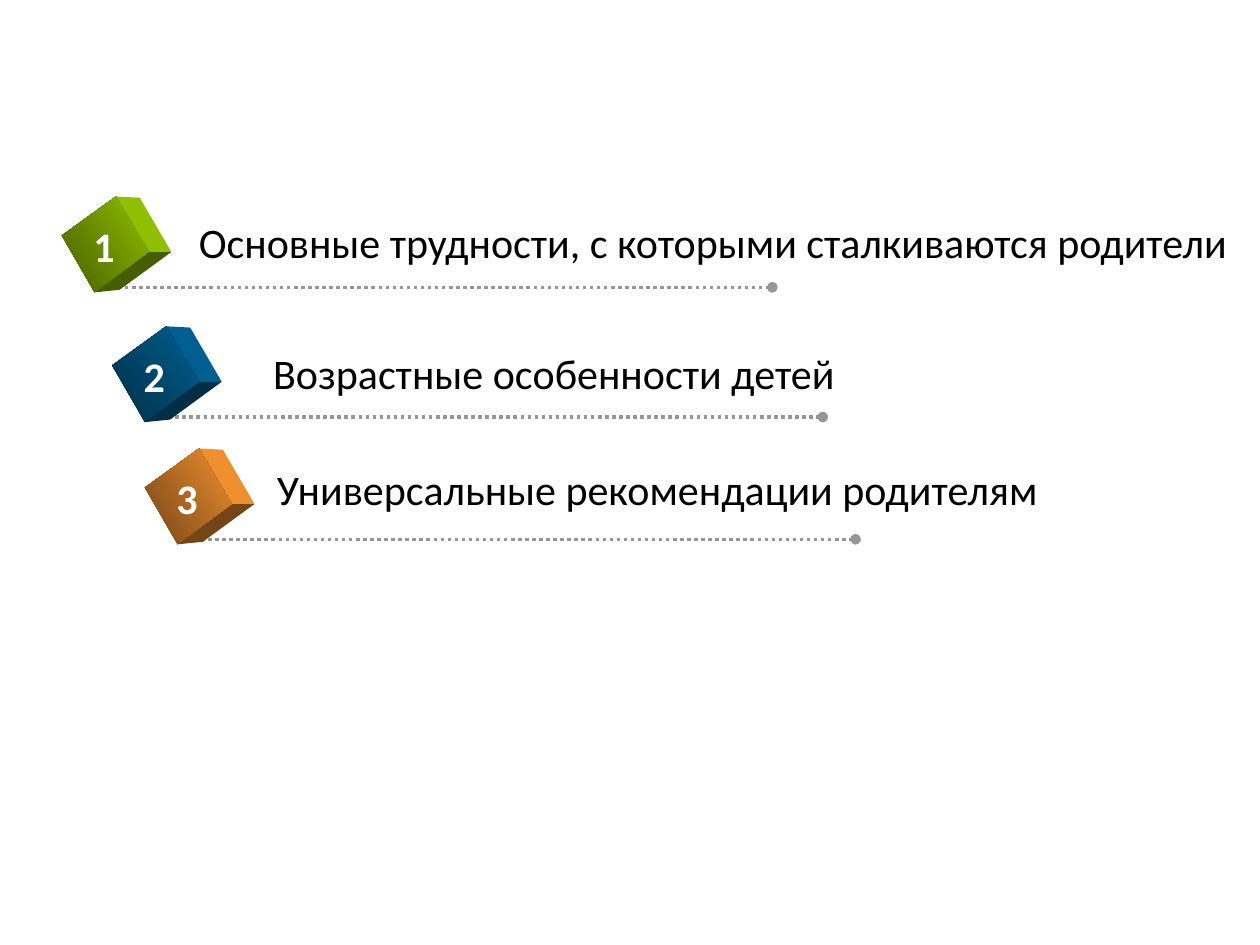
from lxml import etree
from pptx import Presentation
from pptx.dml.color import RGBColor
from pptx.enum.dml import MSO_LINE
from pptx.enum.shapes import MSO_CONNECTOR
from pptx.enum.text import MSO_AUTO_SIZE, PP_ALIGN
from pptx.oxml.ns import qn
from pptx.util import Inches, Pt

STRAIGHT, DOTS = MSO_CONNECTOR.STRAIGHT, MSO_LINE.ROUND_DOT
LEFT, CENTER = PP_ALIGN.LEFT, PP_ALIGN.CENTER
BLACK = RGBColor(0x00, 0x00, 0x00)
WHITE = RGBColor(0xFF, 0xFF, 0xFF)
GREY = RGBColor(0x96, 0x96, 0x96)
GREEN = RGBColor(0x8F, 0xBF, 0x00)
DARK_GREEN = RGBColor(0x46, 0x5D, 0x00)
BLUE = RGBColor(0x00, 0x5F, 0x90)
DARK_BLUE = RGBColor(0x00, 0x2E, 0x46)
ORANGE = RGBColor(0xEE, 0x8F, 0x30)
DARK_ORANGE = RGBColor(0x74, 0x45, 0x17)

# Text, start of the dotted line, text box (left, top, width), light and dark colour
ITEMS = [
    ("Основные трудности, с которыми сталкиваются родители",
     (0.88, 2.28), (1.48, 1.67, 8.44), GREEN, DARK_GREEN),
    ("Возрастные особенности детей",
     (1.28, 3.31), (2.07, 2.71, 4.7), BLUE, DARK_BLUE),
    ("Универсальные рекомендации родителям",
     (1.54, 4.28), (2.1, 3.63, 6.3), ORANGE, DARK_ORANGE),
]
LINE_LENGTH = 5.25

# Cube corners, measured from the start of the line
FRONT = [(-0.39, -0.41), (0.04, -0.72), (0.3, -0.28), (-0.13, 0.04)]
BACK_TOP, BACK_RIGHT, BACK_BOTTOM = (0.23, -0.71), (0.48, -0.28), (0.07, 0.02)
SIDE = [FRONT[1], BACK_TOP, BACK_RIGHT, FRONT[2]]
BASE = [FRONT[3], FRONT[2], BACK_RIGHT, BACK_BOTTOM]

prs = Presentation()
prs.slide_width, prs.slide_height = Inches(10), Inches(7.5)
s = prs.slides.add_slide(prs.slide_layouts[6])


def add_line(x, y):
    line = s.shapes.add_connector(STRAIGHT, Inches(x), Inches(y),
                                  Inches(x + LINE_LENGTH), Inches(y))
    line.line.color.rgb = GREY
    line.line.width = Pt(2)
    line.line.dash_style = DOTS
    etree.SubElement(line.line._get_or_add_ln(), qn("a:tailEnd"), type="oval")
    etree.SubElement(line._element.spPr, qn("a:effectLst"))


def add_face(x, y, corners, start, end):
    points = [(Inches(x + dx), Inches(y + dy)) for dx, dy in corners]
    builder = s.shapes.build_freeform(*points[0])
    builder.add_line_segments(points[1:], close=True)
    sp = builder.convert_to_shape()
    sp.shadow.inherit = False
    sp.line.fill.background()
    if start == end:
        sp.fill.solid()
        sp.fill.fore_color.rgb = start
    else:
        sp.fill.gradient()
        sp.fill.gradient_angle = 35
        for stop, color, position in zip(sp.fill.gradient_stops, (start, end), (0, 1)):
            stop.color.rgb = color
            stop.position = position


def add_text(text, left, top, width, height, color, bold, align):
    tf = s.shapes.add_textbox(Inches(left), Inches(top),
                              Inches(width), Inches(height)).text_frame
    tf.word_wrap = False
    tf.auto_size = MSO_AUTO_SIZE.SHAPE_TO_FIT_TEXT
    p = tf.paragraphs[0]
    p.alignment = align
    r = p.add_run()
    r.text = text
    r.font.name, r.font.size, r.font.bold = "Calibri", Pt(24), bold
    r.font.color.rgb = color


for number, (text, (x, y), (left, top, width), light, dark) in enumerate(ITEMS, 1):
    add_line(x, y)
    # Numbered cube
    add_face(x, y, BASE, dark, dark)
    add_face(x, y, SIDE, light, light)
    add_face(x, y, FRONT, dark, light)
    add_text(text, left, top, width, 0.51, BLACK, False, LEFT)
    add_text(str(number), x - 0.25, y - 0.58, 0.39, 0.5, WHITE, True, CENTER)

prs.save("out.pptx")
